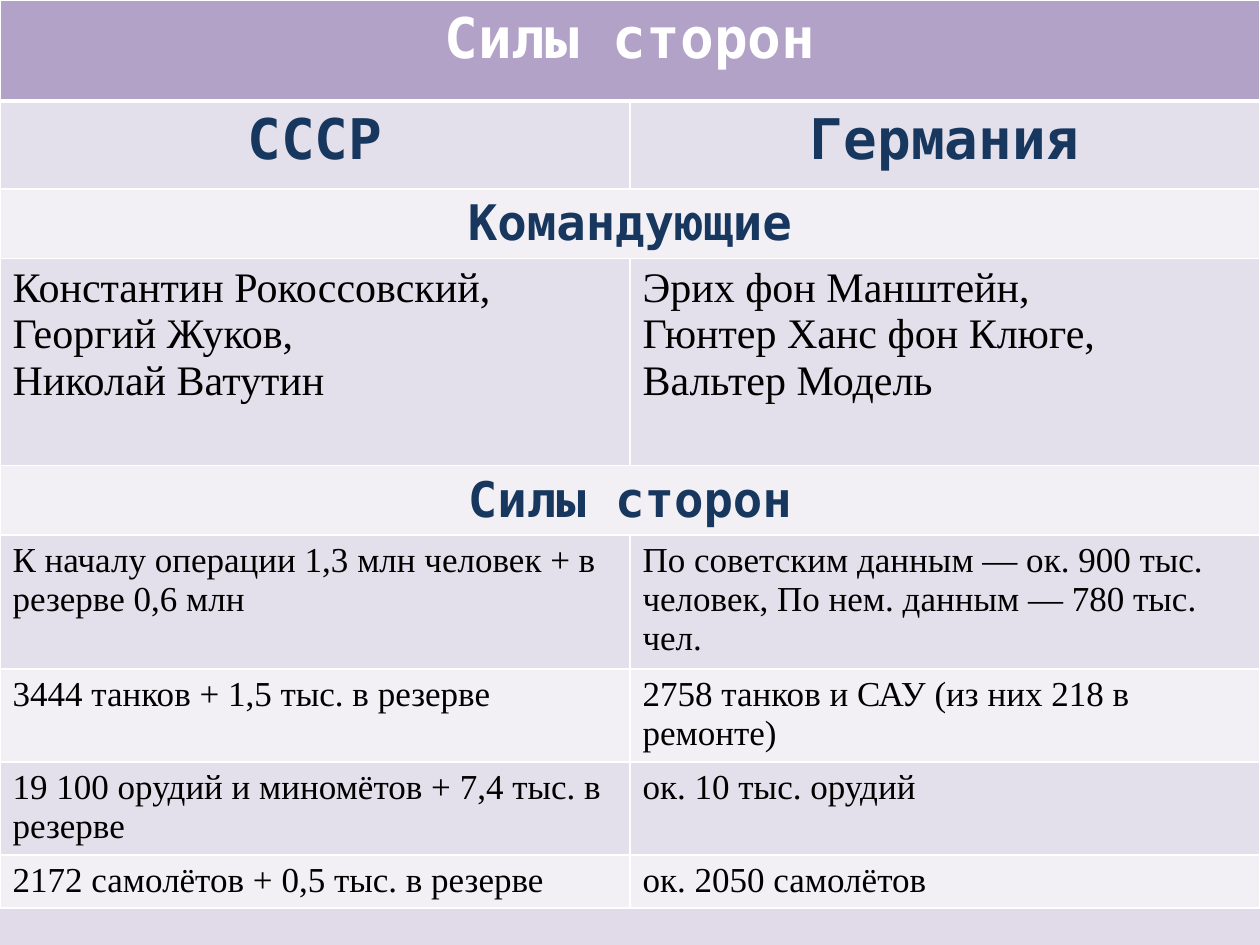
import pptx
import pptx.dml.color
import pptx.enum.text
import pptx.oxml
import pptx.oxml.ns
import pptx.util

RGB = pptx.dml.color.RGBColor
WHITE = RGB(0xFF, 0xFF, 0xFF)
BLACK = RGB(0, 0, 0)
NAVY = RGB(0x17, 0x37, 0x5E)
PURPLE = RGB(0xB2, 0xA2, 0xC7)
BAND_DARK = RGB(0xE4, 0xE0, 0xEB)
BAND_LIGHT = RGB(0xF2, 0xF0, 0xF5)
BACKGROUND = RGB(0xE0, 0xDA, 0xE9)

STYLES = {
    "title": ("DejaVu Sans Mono", 32, True, WHITE),
    "side": ("DejaVu Sans Mono", 32, True, NAVY),
    "section": ("DejaVu Sans Mono", 28, True, NAVY),
    "commanders": ("Times New Roman", 24, False, BLACK),
    "forces": ("Times New Roman", 20, False, BLACK),
}
CENTERED = ("title", "side", "section")

ROWS = [
    ("title", 101, ["Силы сторон"]),
    ("side", 88, ["СССР", "Германия"]),
    ("section", 69, ["Командующие"]),
    ("commanders", 207, [
        "Константин Рокоссовский,\nГеоргий Жуков,\nНиколай Ватутин",
        "Эрих фон Манштейн,\nГюнтер Ханс фон Клюге,\nВальтер Модель",
    ]),
    ("section", 69, ["Силы сторон"]),
    ("forces", 134, [
        "К началу операции 1,3 млн человек + в резерве 0,6 млн",
        "По советским данным — ок. 900 тыс. человек, По нем. данным — 780 тыс. чел.",
    ]),
    ("forces", 93, [
        "3444 танков + 1,5 тыс. в резерве",
        "2758 танков и САУ (из них 218 в ремонте)",
    ]),
    ("forces", 93, [
        "19 100 орудий и миномётов + 7,4 тыс. в резерве",
        "ок. 10 тыс. орудий",
    ]),
    ("forces", 53, ["2172 самолётов + 0,5 тыс. в резерве", "ок. 2050 самолётов"]),
]
SLIDE_W, SLIDE_H = 1260, 945
COLUMNS = 2


def px(length):
    return pptx.util.Emu(length * 914400 // 126)


def add_borders(cell, top, bottom):
    properties = cell._tc.get_or_add_tcPr()
    for side, points in (("L", 1), ("R", 1), ("T", top), ("B", bottom)):
        properties.append(pptx.oxml.parse_xml(
            f'<a:ln{side} {pptx.oxml.ns.nsdecls("a")} w="{pptx.util.Pt(points)}">'
            f'<a:solidFill><a:srgbClr val="{WHITE}"/></a:solidFill></a:ln{side}>'))


def write(cell, text, style):
    font_name, size, bold, color = STYLES[style]
    cell.text_frame.text = text
    for paragraph in cell.text_frame.paragraphs:
        if style in CENTERED:
            paragraph.alignment = pptx.enum.text.PP_ALIGN.CENTER
        for run in paragraph.runs:
            run.font.name = font_name
            run.font.size = pptx.util.Pt(size)
            run.font.bold = bold
            run.font.color.rgb = color


def row_fill(index):
    if index == 0:
        return PURPLE
    return BAND_DARK if index % 2 else BAND_LIGHT


def main():
    deck = pptx.Presentation()
    deck.slide_width, deck.slide_height = px(SLIDE_W), px(SLIDE_H)
    slide = deck.slides.add_slide(deck.slide_layouts[6])
    slide.background.fill.solid()
    slide.background.fill.fore_color.rgb = BACKGROUND

    table_height = sum(height for _, height, _ in ROWS)
    forces = slide.shapes.add_table(
        len(ROWS), COLUMNS, 0, 0, px(SLIDE_W), px(table_height)).table
    for column in forces.columns:
        column.width = px(SLIDE_W // COLUMNS)

    for index, (style, height, texts) in enumerate(ROWS):
        forces.rows[index].height = px(height)
        for column in range(COLUMNS):
            cell = forces.cell(index, column)
            add_borders(cell, 3 if index == 1 else 1, 3 if index == 0 else 1)
            cell.fill.solid()
            cell.fill.fore_color.rgb = row_fill(index)
        if len(texts) == 1:
            forces.cell(index, 0).merge(forces.cell(index, COLUMNS - 1))
        for column, text in enumerate(texts):
            write(forces.cell(index, column), text, style)

    deck.save("out.pptx")


if __name__ == "__main__":
    main()
